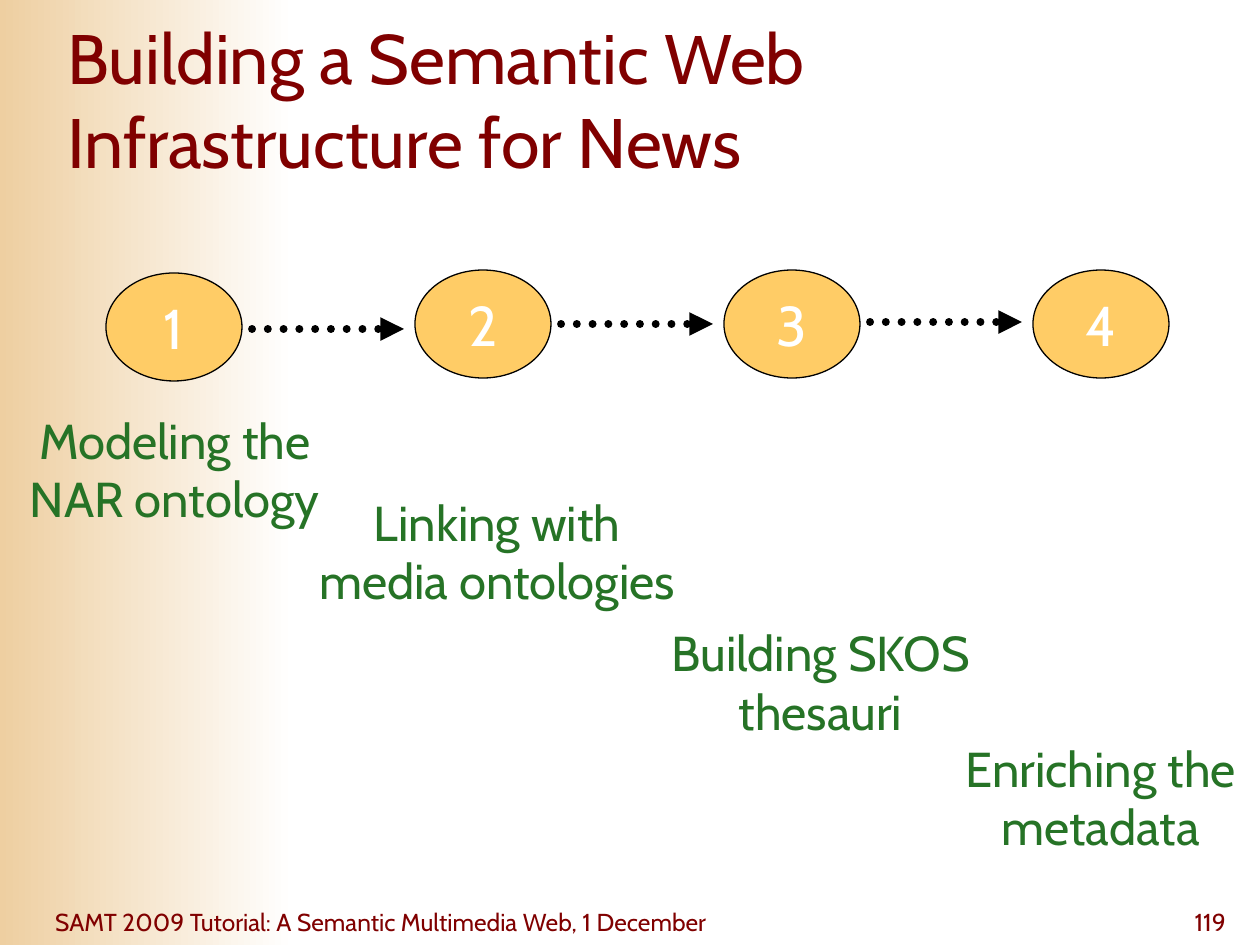
from lxml import etree
from pptx import Presentation
from pptx.dml.color import RGBColor
from pptx.enum.dml import MSO_LINE
from pptx.enum.shapes import MSO_CONNECTOR, MSO_SHAPE
from pptx.enum.text import MSO_ANCHOR, PP_ALIGN
from pptx.oxml.ns import qn
from pptx.util import Pt

PX = 914400 / 126
FONT = "Cabin"
MAROON = RGBColor(0x80, 0x00, 0x00)
GREEN = RGBColor(0x26, 0x73, 0x26)
ORANGE = RGBColor(0xFF, 0xCC, 0x66)
SAND = RGBColor(0xEE, 0xCF, 0xA1)
BLACK = RGBColor(0x00, 0x00, 0x00)
WHITE = RGBColor(0xFF, 0xFF, 0xFF)
LEFT, CENTER, RIGHT = PP_ALIGN.LEFT, PP_ALIGN.CENTER, PP_ALIGN.RIGHT
TOP, MIDDLE = MSO_ANCHOR.TOP, MSO_ANCHOR.MIDDLE
RECTANGLE, OVAL = MSO_SHAPE.RECTANGLE, MSO_SHAPE.OVAL
STRAIGHT, DOTTED = MSO_CONNECTOR.STRAIGHT, MSO_LINE.ROUND_DOT

STEP_PITCH = 309
STEP_TOPS = [273, 270, 270, 270]
ARROW_HEIGHTS = [329, 324, 322]
LABELS = [
    ("Modeling the NAR ontology", (-5, 404, 359, 130)),
    ("Linking with media ontologies", (295, 486, 404, 130)),
    ("Building SKOS thesauri", (641, 616, 359, 130)),
    ("Enriching the metadata", (941, 732, 319, 130)),
]


def px(*lengths):
    """Turn pixel lengths into EMU."""
    return [round(length * PX) for length in lengths]


def write(shape, text, size, color, align, anchor=MIDDLE, wrap=True):
    """Write one styled paragraph into a shape."""
    frame = shape.text_frame
    frame.word_wrap = wrap
    frame.vertical_anchor = anchor
    para = frame.paragraphs[0]
    para.alignment = align
    span = para.add_run()
    span.text = text
    span.font.size = Pt(size)
    span.font.name = FONT
    span.font.color.rgb = color
    return frame


def add_side_band(page, box):
    """Add the fading band along the left edge."""
    band = page.shapes.add_shape(RECTANGLE, *px(*box))
    band.shadow.inherit = False
    band.line.fill.background()
    band.fill.gradient()
    band.fill.gradient_angle = 0
    for stop, color in zip(band.fill.gradient_stops, (SAND, WHITE)):
        stop.color.rgb = color


def add_title(page, box, text):
    """Add the slide title."""
    title = page.shapes.add_textbox(*px(*box))
    frame = write(title, text, 40, MAROON, LEFT)
    frame.margin_right = px(40)[0]


def add_footer(page, box, text, number):
    """Add the footer text at the left of the box and the number at its right."""
    left, top, width, height = box
    number_width = 262
    parts = [
        (text, left, 765, LEFT),
        (number, left + width - number_width, number_width, RIGHT),
    ]
    for words, start, length, align in parts:
        footer = page.shapes.add_textbox(*px(start, top, length, height))
        frame = write(footer, words, 14, MAROON, align)
        frame.margin_left = frame.margin_right = 0
        frame.margin_top = frame.margin_bottom = 0


def add_step(page, box, number):
    """Add a numbered oval."""
    oval = page.shapes.add_shape(OVAL, *px(*box))
    oval.shadow.inherit = False
    oval.fill.solid()
    oval.fill.fore_color.rgb = ORANGE
    oval.line.color.rgb = BLACK
    oval.line.width = Pt(0.75)
    write(oval, str(number), 32, WHITE, CENTER, wrap=False)


def add_label(page, box, text):
    """Add the description of a step."""
    label = page.shapes.add_textbox(*px(*box))
    write(label, text, 28, GREEN, CENTER, anchor=TOP)


def add_arrow(page, left, top, length):
    """Add a dotted arrow pointing right."""
    arrow = page.shapes.add_connector(STRAIGHT, *px(left, top, left + length, top))
    arrow.line.color.rgb = BLACK
    arrow.line.width = Pt(4.5)
    arrow.line.dash_style = DOTTED
    outline = arrow.line._get_or_add_ln()
    outline.set("cap", "rnd")
    etree.SubElement(outline, qn("a:tailEnd"), type="triangle")
    etree.SubElement(arrow._element.spPr, qn("a:effectLst"))


def add_process(page, left):
    """Add the row of steps, their labels and the arrows between them."""
    for index, top in enumerate(STEP_TOPS):
        add_step(page, (left + index * STEP_PITCH, top, 136, 108), index + 1)
    for text, box in LABELS:
        add_label(page, box, text)
    for index, top in enumerate(ARROW_HEIGHTS):
        add_arrow(page, left + 146 + index * STEP_PITCH, top, 152)


def main():
    """Build and save the deck."""
    deck = Presentation()
    deck.slide_width, deck.slide_height = px(1260, 945)
    page = deck.slides.add_slide(deck.slide_layouts[6])
    add_side_band(page, (0, 0, 294, 945))
    add_footer(
        page,
        (55, 898, 1171, 47),
        "SAMT 2009 Tutorial: A Semantic Multimedia Web, 1 December",
        "119",
    )
    add_title(
        page, (55, 19, 1172, 158), "Building a Semantic Web Infrastructure for News"
    )
    add_process(page, 106)
    deck.save("out.pptx")


if __name__ == "__main__":
    main()
